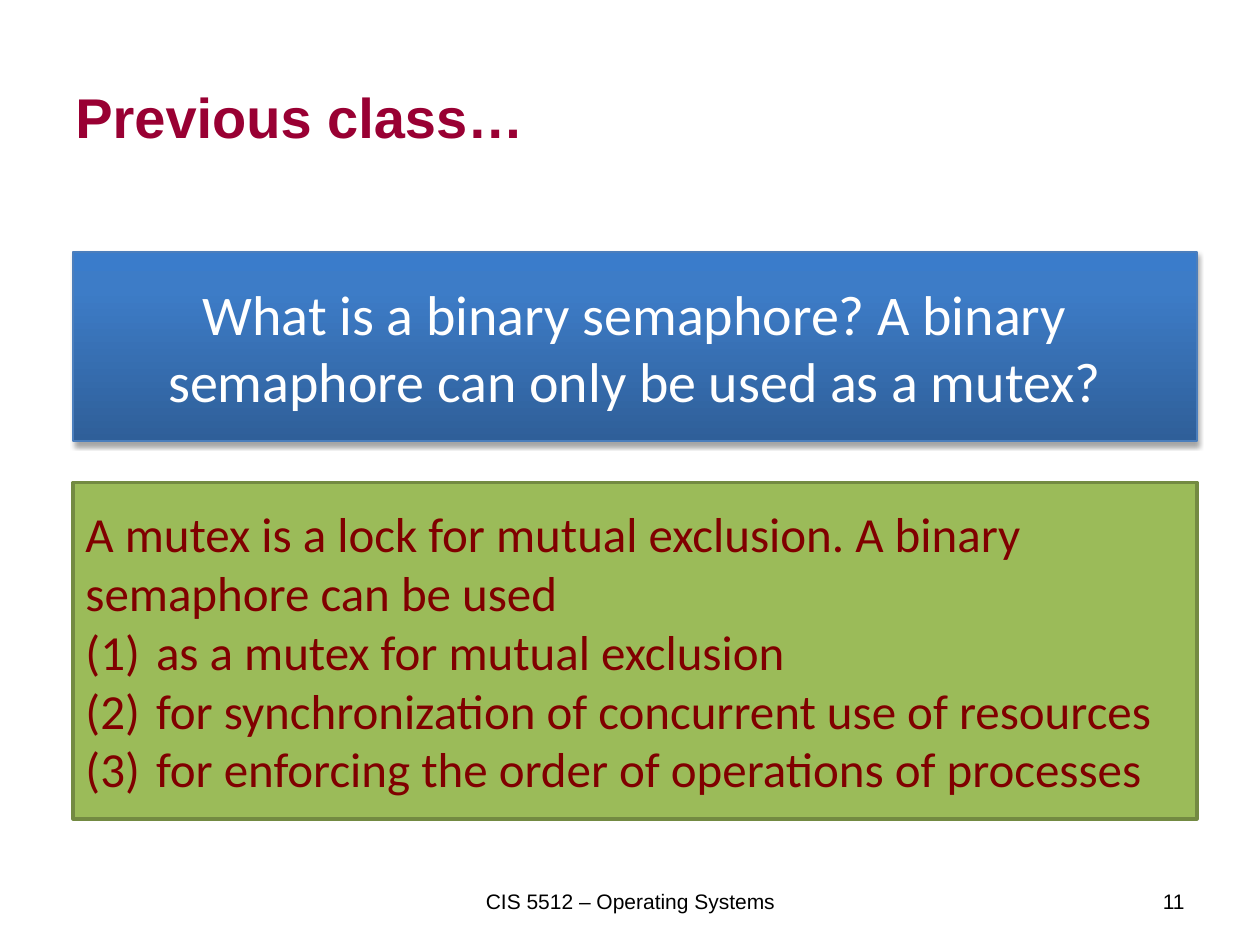
import lxml.etree
import pptx
import pptx.dml.color
import pptx.enum.shapes
import pptx.enum.text
import pptx.oxml.ns
import pptx.util

Inches = pptx.util.Inches
RGBColor = pptx.dml.color.RGBColor
ALIGN = pptx.enum.text.PP_ALIGN
qn = pptx.oxml.ns.qn

BLACK = RGBColor(0x00, 0x00, 0x00)
WHITE = RGBColor(0xFF, 0xFF, 0xFF)
CRIMSON = RGBColor(0x99, 0x00, 0x33)
MAROON = RGBColor(0x80, 0x00, 0x00)
BLUE_DARK = RGBColor(0x2F, 0x5F, 0x99)
BLUE_MIDDLE = RGBColor(0x3D, 0x7C, 0xC7)
BLUE_LIGHT = RGBColor(0x3A, 0x7C, 0xCB)
BLUE_LINE = RGBColor(0x4B, 0x7E, 0xBC)
GREEN = RGBColor(0x9B, 0xBB, 0x59)
GREEN_LINE = RGBColor(0x73, 0x8A, 0x42)

TITLE_FORMAT = {"name": "Arial", "size": pptx.util.Pt(32), "bold": True}
FOOTER_FORMAT = {"name": "Arial", "size": pptx.util.Pt(12)}
QUESTION_FORMAT = {"name": "Calibri", "size": pptx.util.Pt(32)}
ANSWER_FORMAT = {"name": "Calibri", "size": pptx.util.Pt(28)}

TITLE_BOX = (0.5, 0.3, 9, 1.25)
QUESTION_BOX = (0.58, 2, 8.92, 1.5)
ANSWER_BOX = (0.58, 3.83, 8.92, 2.67)
FOOTER_BOX = (3.42, 6.95, 6.08, 0.4)

QUESTION = "What is a binary semaphore? A binary semaphore can only be used as a mutex?"
ANSWER = "A mutex is a lock for mutual exclusion. A binary semaphore can be used"
USES = [
    "as a mutex for mutual exclusion",
    "for synchronization of concurrent use of resources",
    "for enforcing the order of operations of processes",
]


def add_element(parent, tag, **attributes):
    """Append a DrawingML element with the given attributes."""
    element = lxml.etree.SubElement(parent, qn(tag))
    for name, value in attributes.items():
        element.set(name, str(value))
    return element


def write_paragraph(paragraph, text, font_format, color, alignment):
    """Fill one paragraph with formatted text."""
    paragraph.alignment = alignment
    run = paragraph.add_run()
    run.text = text
    for name, value in font_format.items():
        setattr(run.font, name, value)
    run.font.color.rgb = color


def prepare_frame(shape):
    """Wrap and centre vertically the text of a shape."""
    frame = shape.text_frame
    frame.word_wrap = True
    frame.vertical_anchor = pptx.enum.text.MSO_ANCHOR.MIDDLE
    return frame


def add_label(slide, box, text, font_format, color, alignment):
    """Add a single-paragraph text box."""
    shape = slide.shapes.add_textbox(*map(Inches, box))
    frame = prepare_frame(shape)
    write_paragraph(frame.paragraphs[0], text, font_format, color, alignment)


def add_panel(slide, box, line_color, line_width):
    """Add an outlined rectangle without a shadow."""
    rectangle = pptx.enum.shapes.MSO_SHAPE.RECTANGLE
    shape = slide.shapes.add_shape(rectangle, *map(Inches, box))
    shape.shadow.inherit = False
    shape.line.color.rgb = line_color
    shape.line.width = pptx.util.Pt(line_width)
    return shape


def add_question(slide, box):
    """Add the blue gradient panel with the question."""
    shape = add_panel(slide, box, BLUE_LINE, 0.75)
    shape.fill.gradient()
    shape.fill.gradient_angle = 90
    properties = shape._element.spPr
    stops = properties.find(qn("a:gradFill")).find(qn("a:gsLst"))
    for stop in list(stops):
        stops.remove(stop)
    for percent, color in ((0, BLUE_DARK), (80, BLUE_MIDDLE), (100, BLUE_LIGHT)):
        stop = add_element(stops, "a:gs", pos=percent * 1000)
        add_element(stop, "a:srgbClr", val=color)

    shadow = add_element(
        properties.find(qn("a:effectLst")), "a:outerShdw",
        blurRad=pptx.util.Pt(3.1), dist=pptx.util.Pt(1.8), dir=5400000, rotWithShape=0)
    shadow_color = add_element(shadow, "a:srgbClr", val=BLACK)
    add_element(shadow_color, "a:alpha", val=35000)

    frame = prepare_frame(shape)
    write_paragraph(frame.paragraphs[0], QUESTION, QUESTION_FORMAT, WHITE, ALIGN.CENTER)


def add_answer(slide, box):
    """Add the green panel with the answer and its numbered uses."""
    shape = add_panel(slide, box, GREEN_LINE, 2)
    shape.fill.solid()
    shape.fill.fore_color.rgb = GREEN
    frame = prepare_frame(shape)
    write_paragraph(frame.paragraphs[0], ANSWER, ANSWER_FORMAT, MAROON, ALIGN.LEFT)
    for use in USES:
        paragraph = frame.add_paragraph()
        properties = paragraph._p.get_or_add_pPr()
        properties.set("marL", str(Inches(0.56)))
        properties.set("indent", str(-Inches(0.56)))
        add_element(properties, "a:buFont", typeface="+mj-lt")
        add_element(properties, "a:buAutoNum", type="arabicParenBoth")
        write_paragraph(paragraph, use, ANSWER_FORMAT, MAROON, ALIGN.LEFT)


def add_footer(slide, box):
    """Add the course name at the left and the page number at the right."""
    left, top, width, height = box
    number_width = 2.33
    number_left = left + width - number_width
    add_label(slide, (left, top, 3.17, height), "CIS 5512 – Operating Systems",
              FOOTER_FORMAT, BLACK, ALIGN.CENTER)
    add_label(slide, (number_left, top, number_width, height), "11",
              FOOTER_FORMAT, BLACK, ALIGN.RIGHT)


def main():
    """Build and save the presentation."""
    presentation = pptx.Presentation()
    presentation.slide_width = Inches(10)
    presentation.slide_height = Inches(7.5)
    slide = presentation.slides.add_slide(presentation.slide_layouts[6])
    add_label(slide, TITLE_BOX, "Previous class…", TITLE_FORMAT, CRIMSON, ALIGN.LEFT)
    add_footer(slide, FOOTER_BOX)
    add_question(slide, QUESTION_BOX)
    add_answer(slide, ANSWER_BOX)
    presentation.save("out.pptx")


if __name__ == "__main__":
    main()
